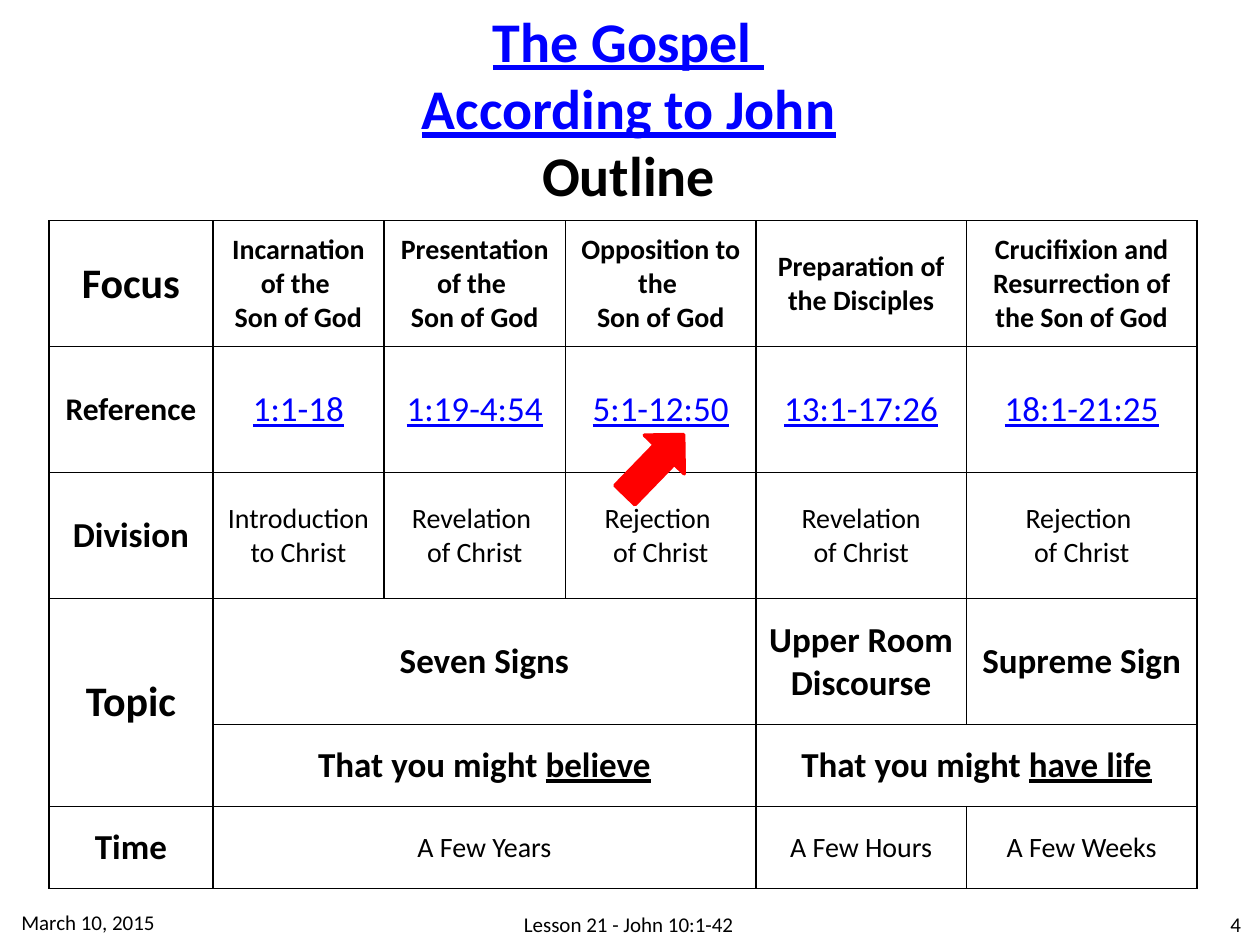
from lxml import etree
from pptx import Presentation
from pptx.dml.color import RGBColor
from pptx.enum.shapes import MSO_SHAPE
from pptx.enum.text import MSO_ANCHOR, MSO_AUTO_SIZE, PP_ALIGN
from pptx.oxml.ns import qn
from pptx.util import Cm, Pt

LEFT, CENTER, RIGHT = PP_ALIGN.LEFT, PP_ALIGN.CENTER, PP_ALIGN.RIGHT
TOP, MIDDLE = MSO_ANCHOR.TOP, MSO_ANCHOR.MIDDLE
RIGHT_ARROW = MSO_SHAPE.RIGHT_ARROW
GROW = MSO_AUTO_SIZE.SHAPE_TO_FIT_TEXT

COLORS = {"text": "000000", "link": "0000FF", "arrow": "FF0000", "border": "000000"}
FONT = "Calibri"

COLUMN_WIDTHS = [3.3, 3.45, 3.66, 3.84, 4.24, 4.65]
ROW_HEIGHTS = [2.54] * 4 + [1.65] * 2

HEADING = {"size": 24, "bold": True}
LABEL = {"size": 20, "bold": True}
FOCUS = {"size": 16, "bold": True}
REFERENCE = {"size": 20, "color": "link", "underline": True}
PLAIN = {"size": 16}

# Each cell: row, column, rows spanned, columns spanned, text, format
ROW_LABELS = [
    (0, 0, 1, 1, "Focus", HEADING),
    (1, 0, 1, 1, "Reference", {"size": 18, "bold": True}),
    (2, 0, 1, 1, "Division", LABEL),
    (3, 0, 2, 1, "Topic", HEADING),
    (5, 0, 1, 1, "Time", LABEL),
]
SECTIONS = [
    ("Incarnation of the \nSon of God", "1:1-18", "Introduction to Christ"),
    ("Presentation of the \nSon of God", "1:19-4:54", "Revelation \nof Christ"),
    ("Opposition to the \nSon of God", "5:1-12:50", "Rejection \nof Christ"),
    ("Preparation of the Disciples", "13:1-17:26", "Revelation\nof Christ"),
    ("Crucifixion and Resurrection of the Son of God", "18:1-21:25",
     "Rejection \nof Christ"),
]
SECTION_CELLS = [
    (row, column, 1, 1, text, style)
    for column, section in enumerate(SECTIONS, start=1)
    for row, (text, style) in enumerate(zip(section, (FOCUS, REFERENCE, PLAIN)))
]
SPANNING_CELLS = [
    (3, 1, 1, 3, "Seven Signs", LABEL),
    (3, 4, 1, 1, "Upper Room Discourse", LABEL),
    (3, 5, 1, 1, "Supreme Sign", LABEL),
    (4, 1, 1, 3, "That you might _believe_", LABEL),
    (4, 4, 1, 2, "That you might _have life_", LABEL),
    (5, 1, 1, 3, "A Few Years", PLAIN),
    (5, 4, 1, 1, "A Few Hours", PLAIN),
    (5, 5, 1, 1, "A Few Weeks", PLAIN),
]


def rgb(name):
    return RGBColor.from_string(COLORS[name])


def write_paragraph(paragraph, text, size=12, color="text", bold=False,
                    underline=False, align=CENTER):
    """Write one formatted line; words between underscores are underlined."""
    paragraph.alignment = align
    for index, part in enumerate(text.split("_")):
        if not part:
            continue
        run = paragraph.add_run()
        run.text = part
        font = run.font
        font.name, font.size, font.bold = FONT, Pt(size), bold
        font.underline = underline or index % 2 == 1
        font.color.rgb = rgb(color)


def write_lines(text_frame, lines):
    """Write (text, format) pairs, one paragraph each."""
    for index, (text, style) in enumerate(lines):
        paragraph = text_frame.add_paragraph() if index else text_frame.paragraphs[0]
        write_paragraph(paragraph, text, **style)


def add_borders(cell, width=1):
    properties = cell._tc.get_or_add_tcPr()
    for side in ("lnL", "lnR", "lnT", "lnB"):
        line = etree.SubElement(properties, qn(f"a:{side}"), w=str(Pt(width)))
        fill = etree.SubElement(line, qn("a:solidFill"))
        etree.SubElement(fill, qn("a:srgbClr"), val=COLORS["border"])


class SlideBuilder:
    def __init__(self, slide):
        self.slide = slide

    def text_box(self, left, top, width, height, lines, anchor=MIDDLE, wrap=True):
        shape = self.slide.shapes.add_textbox(Cm(left), Cm(top), Cm(width), Cm(height))
        frame = shape.text_frame
        frame.word_wrap = wrap
        frame.vertical_anchor = anchor
        if not wrap:
            frame.auto_size = GROW
        write_lines(frame, lines)

    def table(self, left, top, widths, heights, cells):
        table = self.slide.shapes.add_table(
            len(heights), len(widths), Cm(left), Cm(top),
            Cm(sum(widths)), Cm(sum(heights))).table
        table.first_row = table.horz_banding = False
        for column, width in zip(table.columns, widths):
            column.width = Cm(width)
        for row, height in zip(table.rows, heights):
            row.height = Cm(height)
        for cell in table.iter_cells():
            add_borders(cell)
            cell.fill.background()
        for row, column, row_span, column_span, text, style in cells:
            cell = table.cell(row, column)
            if row_span * column_span > 1:
                cell.merge(table.cell(row + row_span - 1, column + column_span - 1))
            cell.vertical_anchor = MIDDLE
            write_lines(cell.text_frame, [(line, style) for line in text.split("\n")])

    def arrow(self, left, top, width, height, rotation):
        shape = self.slide.shapes.add_shape(
            RIGHT_ARROW, Cm(left), Cm(top), Cm(width), Cm(height))
        shape.rotation = rotation
        shape.shadow.inherit = False
        shape.fill.solid()
        shape.fill.fore_color.rgb = rgb("arrow")
        shape.line.color.rgb = rgb("arrow")
        shape.line.width = Pt(2)


def main():
    presentation = Presentation()
    presentation.slide_width, presentation.slide_height = Cm(25.4), Cm(19.05)
    builder = SlideBuilder(presentation.slides.add_slide(presentation.slide_layouts[6]))

    title = {"size": 32, "bold": True}
    title_link = {**title, "color": "link", "underline": True}
    builder.text_box(8.08, 0, 9.19, 4.37, [
        ("The Gospel ", title_link),
        ("According to John", title_link),
        ("Outline", title),
    ], anchor=TOP, wrap=False)
    builder.table(0.99, 4.45, COLUMN_WIDTHS, ROW_HEIGHTS,
                  ROW_LABELS + SECTION_CELLS + SPANNING_CELLS)
    builder.arrow(12.34, 8.81, 1.7, 1.12, rotation=314.1)
    for left, top, width, text, align in [
        (5.79, 18.11, 13.77, "Lesson 21 - John 10:1-42", CENTER),
        (23.37, 18.11, 1.9, "4", RIGHT),
        (0.18, 18.08, 4.01, "March 10, 2015", LEFT),
    ]:
        builder.text_box(left, top, width, 1.02, [(text, {"align": align})])

    presentation.save("out.pptx")


if __name__ == "__main__":
    main()
